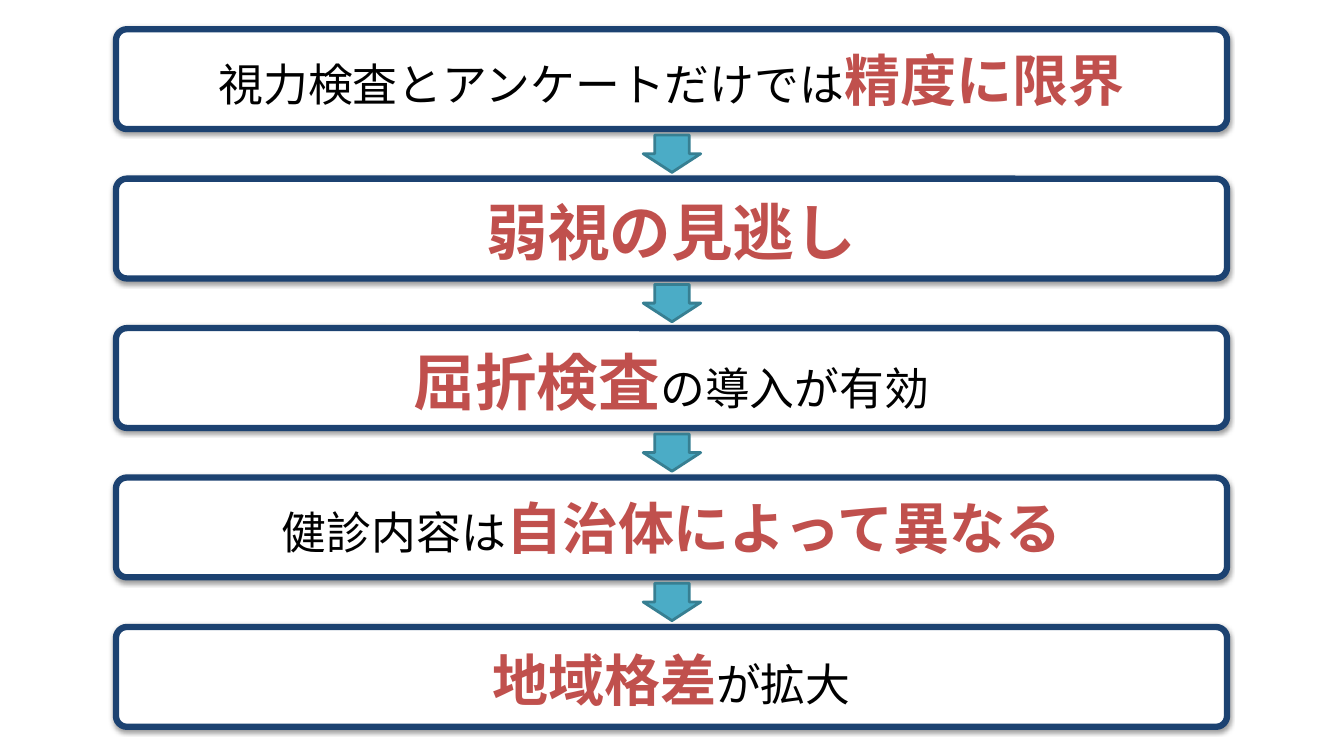
"""Build a five-step flow slide on the limits of vision screening."""
from lxml.etree import SubElement
from pptx import Presentation
from pptx.dml.color import RGBColor
from pptx.enum.shapes import MSO_SHAPE
from pptx.enum.text import MSO_ANCHOR, PP_ALIGN
from pptx.oxml import parse_xml
from pptx.oxml.ns import nsdecls, qn
from pptx.util import Inches, Pt

FONT = "Noto Sans CJK JP"
RED, BLACK = "C0504D", "000000"
BOX_SHADOW = (
    f'<a:effectLst {nsdecls("a")}><a:outerShdw blurRad="40000" dist="20000" dir="5400000" rotWithShape="0">'
    '<a:srgbClr val="000000"><a:alpha val="38000"/></a:srgbClr></a:outerShdw></a:effectLst>'
)


def paint(color_format, color):
    color_format.rgb = RGBColor.from_string(color)


def add_text(text, *, paragraph, size, color, bold):
    run = paragraph.add_run()
    run.text = text
    run.font.name = FONT
    run.font.size = Pt(size)
    run.font.bold = bold
    paint(run.font.color, color)
    SubElement(run.font._element, qn("a:ea"), typeface=FONT)


presentation = Presentation()
presentation.slide_width = Inches(13.33)
presentation.slide_height = Inches(7.5)
slide = presentation.slides.add_slide(presentation.slide_layouts[6])

steps = [
    (0.15, 0.23, [("視力検査とアンケートだけでは", 32, BLACK), ("精度に限界", 40, RED)]),
    (0.2, 0.34, [("弱視の見逃し", 44, RED)]),
    (0.2, 0.34, [("屈折検査", 44, RED), ("の導入が有効", 32, BLACK)]),
    (0.15, 0.23, [("健診内容は", 32, BLACK), ("自治体によって異なる", 40, RED)]),
    (0.18, 0.3, [("地域格差", 40, RED), ("が拡大", 32, BLACK)]),
]
first_top, last_top = 0.29, 6.22
pitch = (last_top - first_top) / (len(steps) - 1)

for index, (margin, top_margin, runs) in enumerate(steps):
    top = first_top + index * pitch
    box = slide.shapes.add_shape(
        MSO_SHAPE.ROUNDED_RECTANGLE, Inches(1.15), Inches(top), Inches(11.02), Inches(0.99)
    )
    box.adjustments[0] = 0.11
    box.fill.solid()
    paint(box.fill.fore_color, "FFFFFF")
    paint(box.line.color, "1C4271")
    box.line.width = Pt(4.5)
    box._element.spPr.append(parse_xml(BOX_SHADOW))

    frame = box.text_frame
    frame.word_wrap = True
    frame.vertical_anchor = MSO_ANCHOR.MIDDLE
    frame.margin_left = frame.margin_right = frame.margin_bottom = Inches(margin)
    frame.margin_top = Inches(top_margin)
    paragraph = frame.paragraphs[0]
    paragraph.alignment = PP_ALIGN.CENTER
    paragraph.line_spacing = 0.9
    for text, size, color in runs:
        add_text(text, paragraph=paragraph, size=size, color=color, bold=color == RED)

    if index < len(steps) - 1:
        arrow = slide.shapes.add_shape(
            MSO_SHAPE.DOWN_ARROW, Inches(6.38), Inches(top + 1.05), Inches(0.57), Inches(0.37)
        )
        arrow.adjustments[0] = 0.6
        arrow.adjustments[1] = 0.5
        arrow.shadow.inherit = False
        arrow.fill.solid()
        paint(arrow.fill.fore_color, "4BACC6")
        paint(arrow.line.color, "377F92")
        arrow.line.width = Pt(2)

presentation.save("out.pptx")
